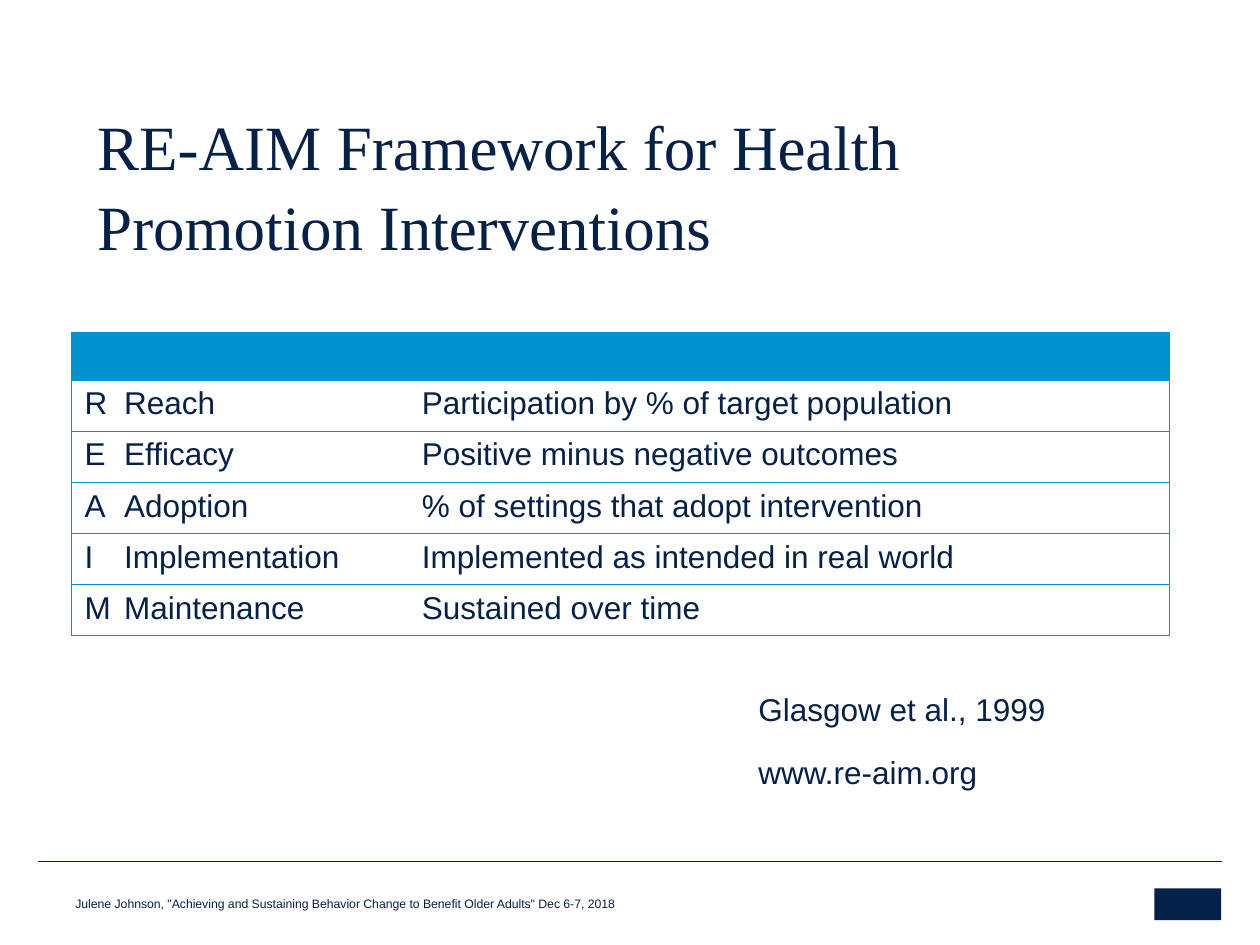
from lxml import etree
from pptx import Presentation
from pptx.dml.color import RGBColor
from pptx.enum.shapes import MSO_CONNECTOR, MSO_SHAPE
from pptx.enum.text import MSO_ANCHOR, MSO_AUTO_SIZE, PP_ALIGN
from pptx.oxml.ns import qn
from pptx.util import Cm, Pt

LINE = MSO_CONNECTOR.STRAIGHT
RECT = MSO_SHAPE.RECTANGLE
TOP, BOTTOM = MSO_ANCHOR.TOP, MSO_ANCHOR.BOTTOM
NONE = MSO_AUTO_SIZE.NONE
LEFT = PP_ALIGN.LEFT

COLORS = {"navy": "052049", "blue": "0093D0", "white": "FFFFFF"}
ROWS = [
    ("R\tReach", "Participation by % of target population"),
    ("E\tEfficacy", "Positive minus negative outcomes"),
    ("A\tAdoption", "% of settings that adopt intervention"),
    ("I\tImplementation", "Implemented as intended in real world"),
    ("M\tMaintenance", "Sustained over time"),
]


class Deck:
    def __init__(self, slide):
        self.slide = slide
        self.sans = "Arial"
        self.serif = "Times New Roman"

    def color(self, name):
        return RGBColor.from_string(COLORS[name])

    def format(self, frame, size, font):
        for para in frame.paragraphs:
            para.alignment = LEFT
            for run in para.runs:
                run.font.size = Pt(size)
                run.font.name = font
                run.font.color.rgb = self.color("navy")

    def trim(self, frame):
        frame.margin_left = frame.margin_right = 0
        frame.margin_top = frame.margin_bottom = 0

    def title(self, text, x, y, w, h):
        shape = self.slide.shapes.title
        shape.left, shape.top, shape.width, shape.height = map(Cm, (x, y, w, h))
        frame = shape.text_frame
        frame.text = text
        frame.word_wrap = True
        frame.auto_size = NONE
        frame.vertical_anchor = TOP
        self.trim(frame)
        self.format(frame, 36, self.serif)
        frame.paragraphs[0].line_spacing = 1.05

    def text(self, lines, x, y, w, h, size, gap=0):
        box = self.slide.shapes.add_textbox(Cm(x), Cm(y), Cm(w), Cm(h))
        frame = box.text_frame
        frame.text = "\n".join(lines)
        frame.word_wrap = True
        for para in frame.paragraphs[1:]:
            para.space_before = Pt(gap)
        self.format(frame, size, self.sans)
        return frame

    def footer(self, line, x, y, w, h):
        frame = self.text([line], x, y, w, h, 7)
        frame.vertical_anchor = BOTTOM
        self.trim(frame)

    def rule(self, x, y, end):
        line = self.slide.shapes.add_connector(LINE, Cm(x), Cm(y), Cm(end), Cm(y))
        line.line.color.rgb = self.color("navy")
        line.line.width = Pt(0.25)
        etree.SubElement(line._element.spPr, qn("a:effectLst"))

    def block(self, x, y, w, h):
        shape = self.slide.shapes.add_shape(RECT, Cm(x), Cm(y), Cm(w), Cm(h))
        shape.shadow.inherit = False
        shape.fill.solid()
        shape.fill.fore_color.rgb = self.color("navy")
        shape.line.fill.background()

    def border(self, cell, inner):
        props = cell._tc.get_or_add_tcPr()
        for place, side in enumerate("LRTB"):
            edge = etree.Element(qn("a:ln" + side), w=str(Pt(0.75)))
            if side == inner:
                etree.SubElement(edge, qn("a:noFill"))
            else:
                fill = etree.SubElement(edge, qn("a:solidFill"))
                etree.SubElement(fill, qn("a:srgbClr"), val=COLORS["blue"])
            props.insert(place, edge)

    def tab(self, para, stop):
        props = para._p.get_or_add_pPr()
        tabs = etree.SubElement(props, qn("a:tabLst"))
        etree.SubElement(tabs, qn("a:tab"), pos=str(Cm(stop)), algn="l")

    def table(self, rows, x, y, widths, head, row):
        high = head + row * len(rows)
        frame = self.slide.shapes.add_table(
            len(rows) + 1, len(widths), Cm(x), Cm(y), Cm(sum(widths)), Cm(high))
        grid = frame.table
        for col, width in zip(grid.columns, widths):
            col.width = Cm(width)
        for r, texts in enumerate([("", "")] + rows):
            grid.rows[r].height = Cm(row if r else head)
            for c, text in enumerate(texts):
                cell = grid.cell(r, c)
                cell.fill.solid()
                cell.fill.fore_color.rgb = self.color("white" if r else "blue")
                self.border(cell, "L" if c else "R")
                if r:
                    cell.text_frame.text = text
                    self.format(cell.text_frame, 18, self.sans)
                    if c == 0:
                        self.tab(cell.text_frame.paragraphs[0], 0.8)
                else:
                    cell.margin_top = cell.margin_bottom = 0


def main():
    prs = Presentation()
    prs.slide_width, prs.slide_height = Cm(25.4), Cm(19.05)
    deck = Deck(prs.slides.add_slide(prs.slide_layouts[5]))
    deck.rule(0.76, 17.37, 24.64)
    deck.block(23.27, 17.91, 1.35, 0.64)
    deck.table(ROWS, 1.45, 6.71, [6.8, 15.32], 0.95, 1.03)
    deck.title("RE-AIM Framework for Health Promotion Interventions",
               1.96, 2.1, 20.04, 3.07)
    deck.text(["Glasgow et al., 1999", "www.re-aim.org"],
              15.04, 13.79, 6.53, 2.26, 18, 14)
    deck.footer('Julene Johnson, "Achieving and Sustaining Behavior Change '
                'to Benefit Older Adults" Dec 6-7, 2018', 1.52, 17.98, 11.96, 0.38)
    prs.save("out.pptx")


if __name__ == "__main__":
    main()
